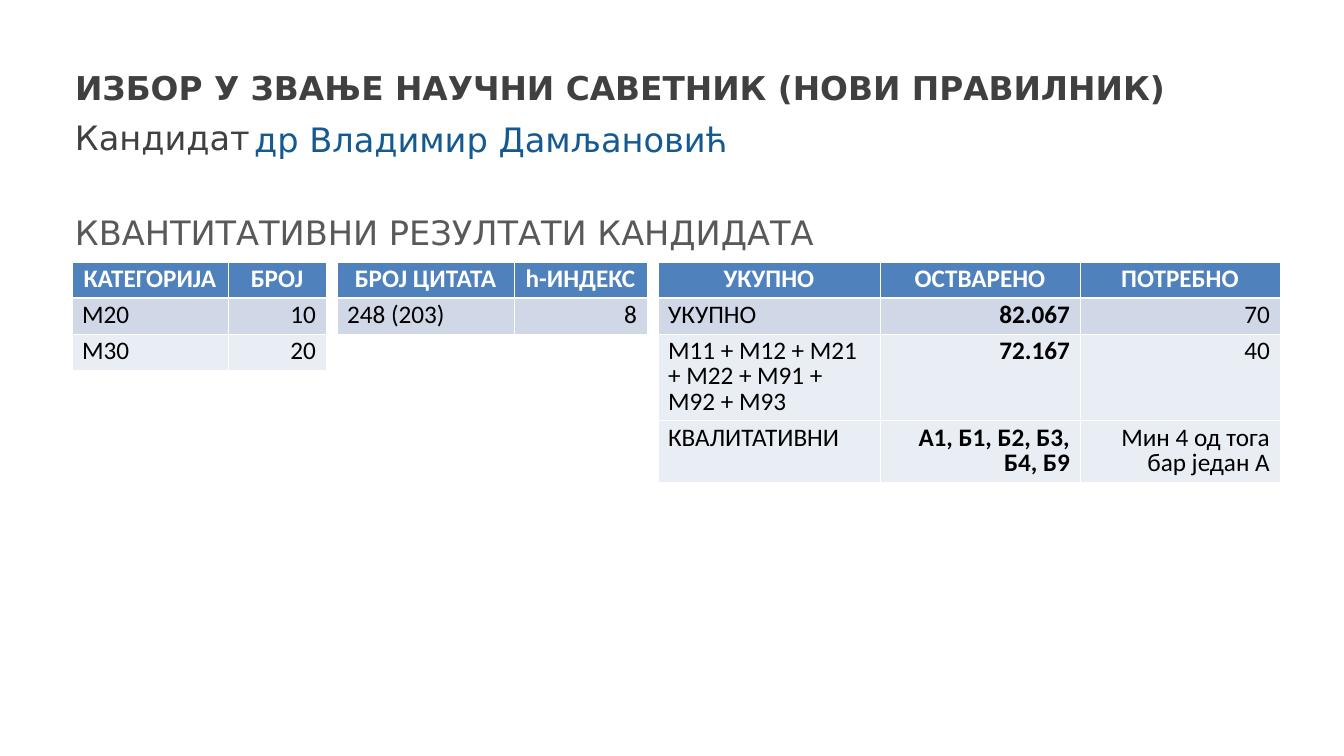
from lxml import etree
from pptx import Presentation
from pptx.dml.color import RGBColor as RGB
from pptx.enum.text import MSO_ANCHOR as Anchor, MSO_AUTO_SIZE as Fit, PP_ALIGN as Align
from pptx.oxml.ns import qn
from pptx.util import Pt

# Colours and fonts
WHITE = RGB(0xFF, 0xFF, 0xFF)
BLACK = RGB(0x00, 0x00, 0x00)
DARK = RGB(0x40, 0x40, 0x40)
GREY = RGB(0x59, 0x59, 0x59)
NAVY = RGB(0x14, 0x59, 0x91)
HEAD = RGB(0x4F, 0x81, 0xBD)
BAND = RGB(0xD0, 0xD8, 0xE8)
PALE = RGB(0xE9, 0xED, 0xF4)
SANS, CELL = "DejaVu Sans", "Calibri"
THIN, THICK = 0.45, 1.47

# Content: text lines as (text, box, size, bold, colour, anchor)
TITLE = ("ИЗБОР У ЗВАЊЕ НАУЧНИ САВЕТНИК (НОВИ ПРАВИЛНИК)",
         (65, 54, 1216, 58), 23.4, True, DARK, Anchor.BOTTOM)
NAME = ("др Владимир Дамљановић",
        (244, 113, 680, 48), 24, False, NAVY, Anchor.MIDDLE)
LABELS = [
    ("Кандидат", (65, 112, 1216, 50), 24, False, DARK, Anchor.TOP),
    ("КВАНТИТАТИВНИ РЕЗУЛТАТИ КАНДИДАТА",
     (65, 199, 1216, 58), 24, False, GREY, Anchor.BOTTOM),
]

# Content: tables
TOP = 262
TABLES = [
    {"left": 658, "cols": [222, 200, 200], "rows": [36, 36, 86, 60],
     "anchor": Anchor.TOP, "bold": 1,
     "cells": [
         ("УКУПНО", "ОСТВАРЕНО", "ПОТРЕБНО"),
         ("УКУПНО", "82.067", "70"),
         ("М11 + М12 + М21 + М22 + М91 + М92 + М93", "72.167", "40"),
         ("КВАЛИТАТИВНИ", "А1, Б1, Б2, Б3, Б4, Б9", "Мин 4 од тога бар један А"),
     ]},
    {"left": 72, "cols": [156, 98], "rows": [36, 36, 36],
     "anchor": Anchor.MIDDLE, "bold": None,
     "cells": [("КАТЕГОРИЈА", "БРОЈ"), ("М20", "10"), ("М30", "20")]},
    {"left": 337, "cols": [177, 133], "rows": [36, 36],
     "anchor": Anchor.MIDDLE, "bold": None,
     "cells": [("БРОЈ ЦИТАТА", "h-ИНДЕКС"), ("248 (203)", "8")]},
]


def px(n):
    return round(n * 914400 / 100.8)


def add_run(par, text, size, bold, color, face):
    run = par.add_run()
    run.text = text
    font = run.font
    font.name, font.size, font.bold = face, Pt(size), bold
    font.color.rgb = color


def put_text(shape, text, box, size, bold, color, anchor):
    shape.left, shape.top, shape.width, shape.height = map(px, box)
    frame = shape.text_frame
    frame.word_wrap, frame.auto_size = True, Fit.NONE
    frame.vertical_anchor = anchor
    par = frame.paragraphs[0]
    par.alignment, par.space_before = Align.LEFT, Pt(0)
    add_run(par, text, size, bold, color, SANS)
    return par


def add_edge(cell, side, width):
    props = cell._tc.get_or_add_tcPr()
    line = etree.SubElement(props, qn("a:ln" + side), w=str(Pt(width)))
    fill = etree.SubElement(line, qn("a:solidFill"))
    etree.SubElement(fill, qn("a:srgbClr"), val=str(WHITE))


def put_cell(cell, text, row, col, bold, anchor):
    head = row == 0
    edges = {"L": THIN, "R": THIN,
             "T": THICK if row == 1 else THIN,
             "B": THICK if head else THIN}
    for side, width in edges.items():
        add_edge(cell, side, width)
    cell.fill.solid()
    cell.fill.fore_color.rgb = (HEAD, BAND, PALE)[min(row, 2)]
    cell.vertical_anchor = anchor
    par = cell.text_frame.paragraphs[0]
    par.line_spacing = 0.83
    par.alignment = Align.CENTER if head else Align.RIGHT if col else Align.LEFT
    add_run(par, text, 18, head or col == bold, WHITE if head else BLACK, CELL)


def put_table(slide, data):
    cols, rows = data["cols"], data["rows"]
    box = (data["left"], TOP, sum(cols), sum(rows))
    table = slide.shapes.add_table(len(rows), len(cols), *map(px, box)).table
    for col, width in zip(table.columns, cols):
        col.width = px(width)
    for row, height in zip(table.rows, rows):
        row.height = px(height)
    for r, line in enumerate(data["cells"]):
        for c, text in enumerate(line):
            put_cell(table.cell(r, c), text, r, c, data["bold"], data["anchor"])


def main():
    deck = Presentation()
    deck.slide_width, deck.slide_height = px(1344), px(756)
    # Section header layout: a title and a body without bullets
    slide = deck.slides.add_slide(deck.slide_layouts[2])

    # Headings
    put_text(slide.shapes.title, *TITLE)
    par = put_text(slide.placeholders[1], *NAME)
    par.line_spacing, par.space_after = 1.1, Pt(6)
    for label in LABELS:
        put_text(slide.shapes.add_textbox(0, 0, 0, 0), *label)

    # Result tables
    for data in TABLES:
        put_table(slide, data)
    deck.save("out.pptx")


if __name__ == "__main__":
    main()
